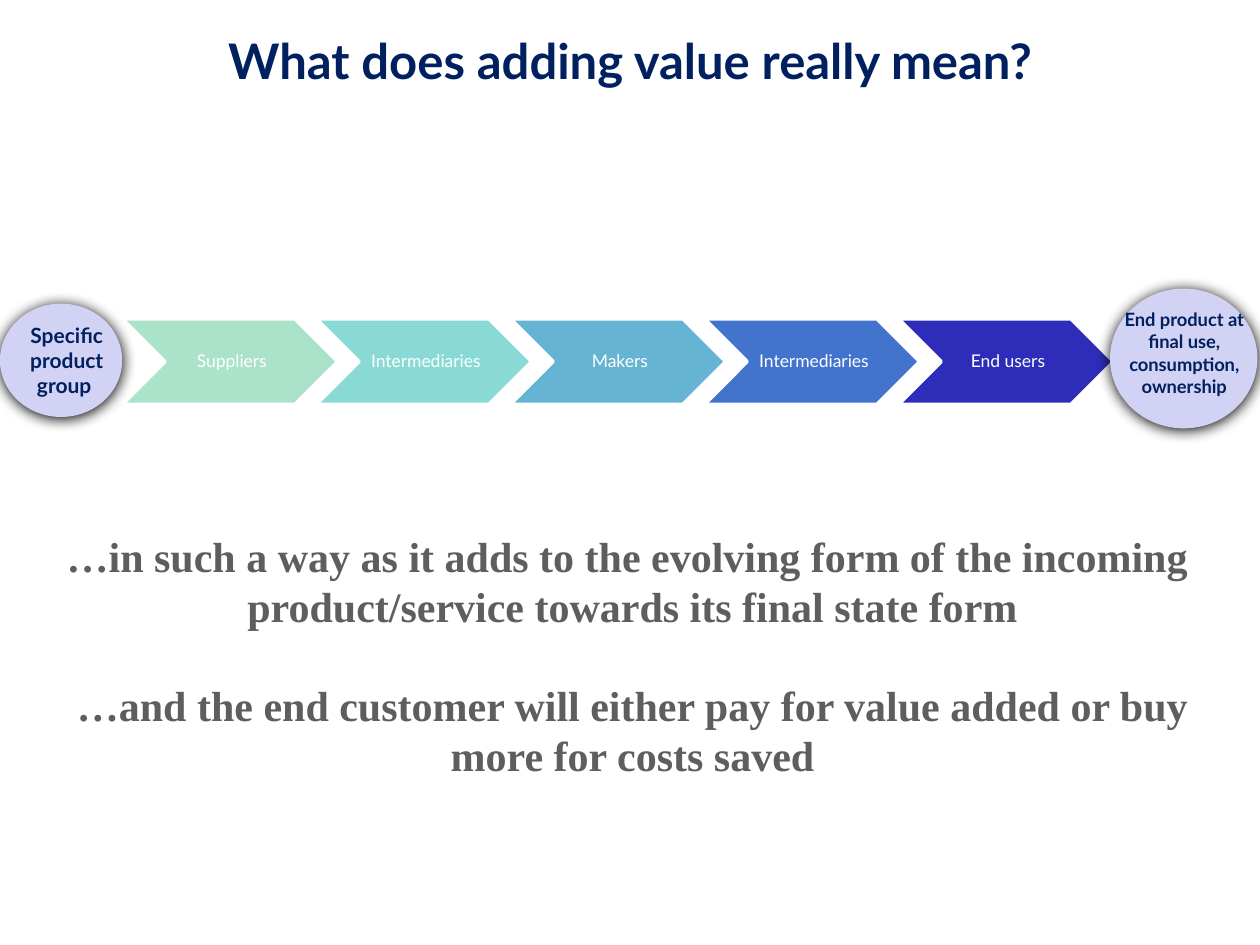
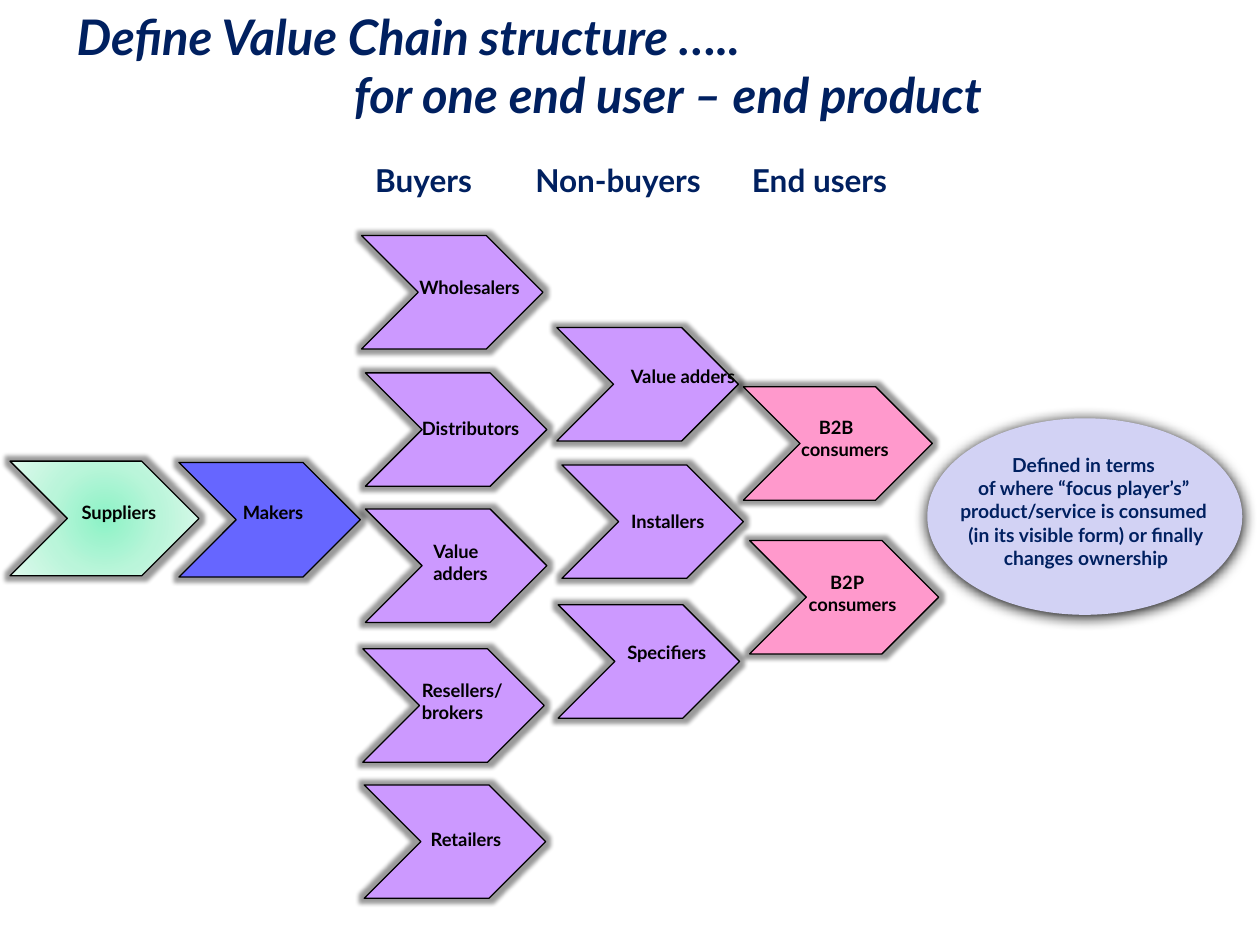
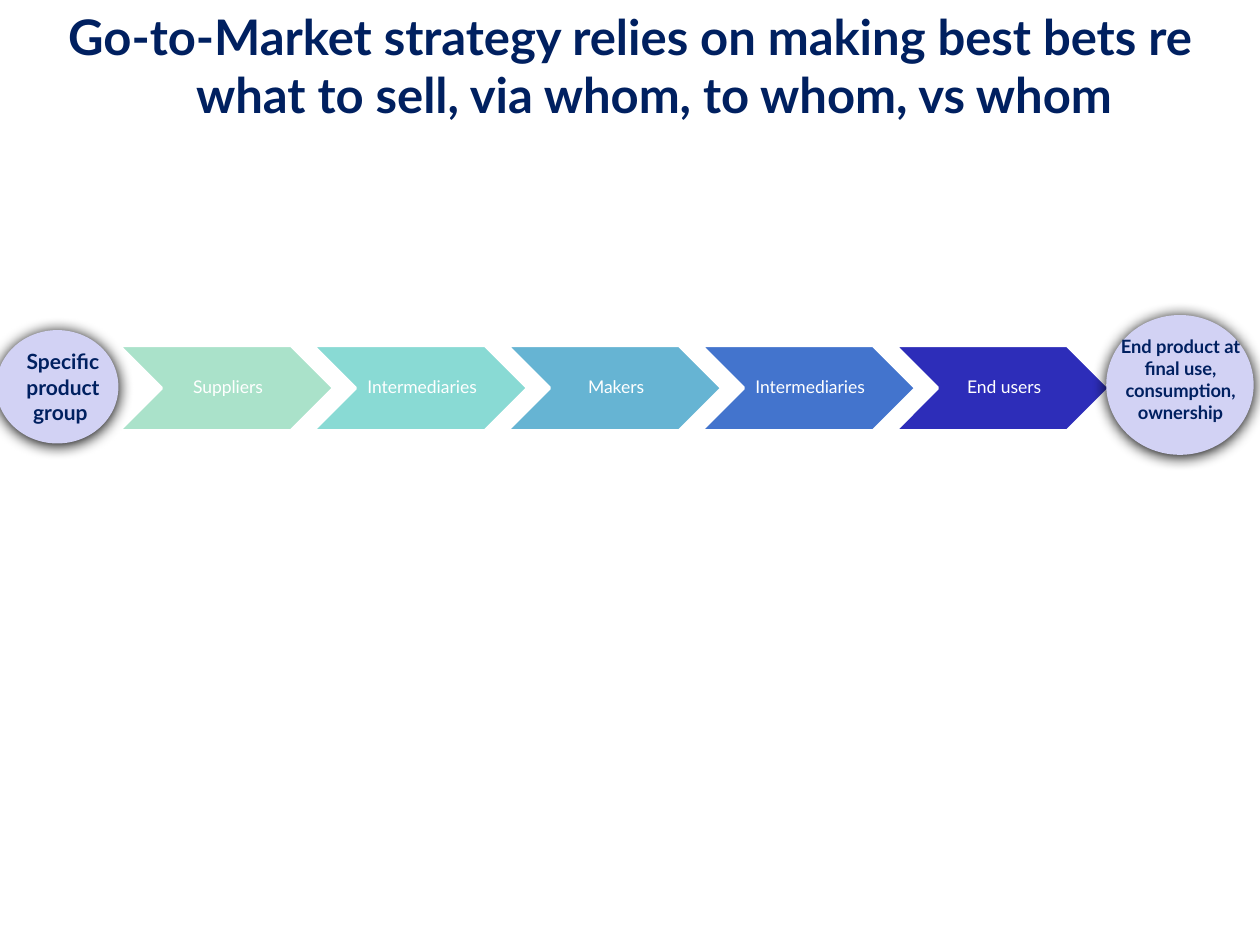
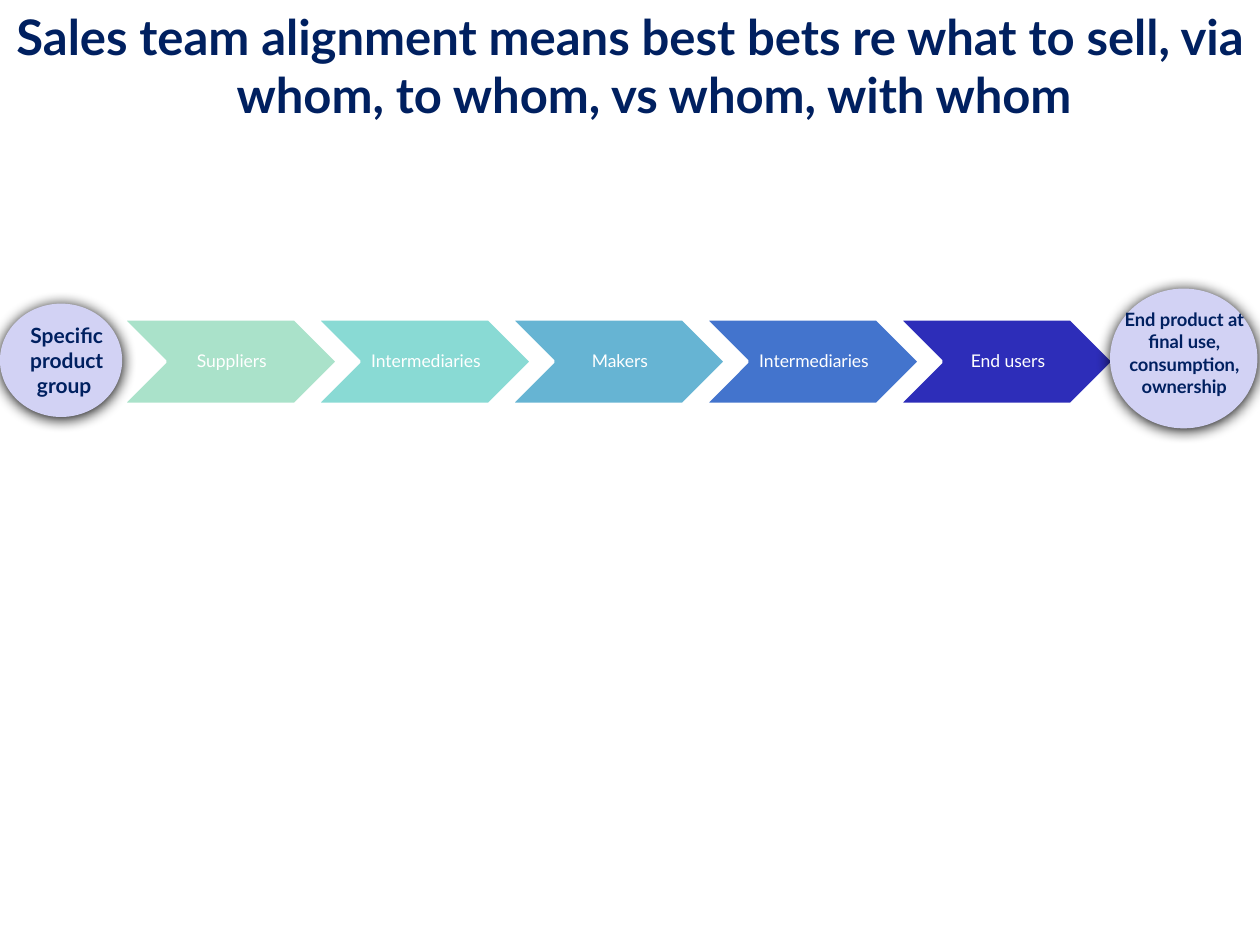
from lxml import etree
from pptx import Presentation
from pptx.dml.color import RGBColor
from pptx.enum.shapes import MSO_SHAPE as SHAPE
from pptx.enum.text import MSO_ANCHOR as ANCHOR, PP_ALIGN as ALIGN
from pptx.oxml import parse_xml
from pptx.oxml.ns import nsdecls, qn
from pptx.util import Emu, Inches, Pt

FONT = "Lato"
NAVY, BLACK, WHITE, GRAY = "002060", "000000", "FFFFFF", "5E5E5E"
LAVENDER, VIOLET, PINK, BLUE = "D2D2F4", "CC99FF", "FF99CC", "6666FF"
MINT_STOPS = [(0, "8CF2C6"), (50, "BAF5DA"), (100, "DEF9EC")]

CHAIN = [("Suppliers", "AAE2CA"), ("Intermediaries", "89DAD4"), ("Makers", "66B4D3"),
         ("Intermediaries", "4374CD"), ("End users", "2D2DB9")]
CHAIN_STEP = 1.54

STAGES = [
    ((1.42, 3.67, 1.44, 0.91), BLUE, ["Makers"], (1.83, 3.93, 0.75, 0.28), 0),
    ((0.08, 3.66, 1.5, 0.91), MINT_STOPS, ["Suppliers"], (0.55, 3.93, 0.94, 0.28), 0),
    ((2.87, 1.87, 1.44, 0.9), VIOLET, ["Wholesalers"], (3.23, 2.14, 1.13, 0.28), 0),
    ((2.9, 2.96, 1.44, 0.9), VIOLET, ["Distributors"], (3.25, 3.26, 1.11, 0.28), 0),
    ((2.9, 4.04, 1.44, 0.9), VIOLET, ["Value", "adders"], (3.34, 4.24, 0.72, 0.45), 0),
    ((2.88, 5.15, 1.44, 0.9), VIOLET, ["Resellers/ brokers"], (3.25, 5.34, 0.97, 0.45), 0),
    ((5.9, 3.07, 1.5, 0.9), PINK, ["B2B", "consumers"], (6.26, 3.25, 1.02, 0.45), 0.14),
    ((5.95, 4.29, 1.5, 0.9), PINK, ["B2P", "consumers"], (6.32, 4.48, 1.02, 0.45), 0.17),
    ((4.43, 4.8, 1.44, 0.9), VIOLET, ["Specifiers"], (4.88, 5.04, 0.92, 0.28), 0),
    ((4.46, 3.69, 1.44, 0.9), VIOLET, ["Installers"], (4.91, 4, 0.95, 0.28), 0),
    ((4.42, 2.6, 1.44, 0.9), VIOLET, ["Value adders"], (4.91, 2.85, 1.14, 0.45), 0),
    ((2.89, 6.23, 1.44, 0.9), VIOLET, ["Retailers"], (3.32, 6.52, 0.9, 0.28), 0),
]

HEADERS = [("Buyers", 2.88, 1.33), ("Non-buyers", 4.15, 2.16), ("End users", 5.87, 2.16)]


def rgb(color):
    return RGBColor.from_string(color)


def inches(box):
    return [Inches(v) for v in box]


def write(tf, lines, size=10.5, color=NAVY, font=FONT, bold=True, italic=False,
          align=ALIGN.CENTER, anchor=ANCHOR.TOP, gap=0, indents=(), hanging=0, spacing=None):
    tf.word_wrap = True
    tf.vertical_anchor = anchor
    for i, line in enumerate(lines):
        p = tf.paragraphs[0] if i == 0 else tf.add_paragraph()
        indent = indents[i] if i < len(indents) else 0
        if indent or hanging:
            pPr = p._p.get_or_add_pPr()
            pPr.set("marL", str(Inches(indent + hanging)))
            pPr.set("indent", str(Inches(-hanging)))
        p.alignment = align
        if spacing:
            p.line_spacing = spacing
        if gap and i == len(lines) - 1:
            p.space_before = Pt(gap)
        r = p.add_run()
        r.text = line
        f = r.font
        f.name, f.size, f.bold, f.italic = font, Pt(size), bold, italic
        f.color.rgb = rgb(color)


def add_text(shapes, box, lines, **fmt):
    tb = shapes.add_textbox(*inches(box))
    write(tb.text_frame, lines, **fmt)


def add_title(slide, text, top=0):
    add_text(slide.shapes, (0, top, 10, 1.07), [text], size=28, hanging=0.38)


def add_effect(sp, tag, alpha, **attrs):
    effects = sp._element.spPr.find(qn("a:effectLst"))
    effect = etree.SubElement(effects, qn(tag), {k: str(v) for k, v in attrs.items()})
    clr = etree.SubElement(effect, qn("a:srgbClr"), val=BLACK)
    etree.SubElement(clr, qn("a:alpha"), val=str(alpha * 1000))


def fill_radial(sp, stops):
    gs = "".join(f'<a:gs pos="{pos * 1000}"><a:srgbClr val="{color}"/></a:gs>'
                 for pos, color in stops)
    grad = parse_xml(f'<a:gradFill {nsdecls("a")}><a:gsLst>{gs}</a:gsLst><a:path path="circle">'
                     '<a:fillToRect l="50000" t="50000" r="50000" b="50000"/></a:path></a:gradFill>')
    sp.fill.background()
    spPr = sp._element.spPr
    spPr.replace(spPr.find(qn("a:noFill")), grad)


def add_shape(shapes, kind, box, fill, line=None, width=0.75):
    sp = shapes.add_shape(kind, *inches(box))
    sp.shadow.inherit = False
    if isinstance(fill, str):
        sp.fill.solid()
        sp.fill.fore_color.rgb = rgb(fill)
    else:
        fill_radial(sp, fill)
    if line:
        sp.line.color.rgb = rgb(line)
        sp.line.width = Pt(width)
    else:
        sp.line.fill.background()
    return sp


def add_bubble(shapes, box, text_box, lines, size):
    sp = add_shape(shapes, SHAPE.OVAL, box, LAVENDER)
    add_effect(sp, "a:outerShdw", 100, blurRad=Pt(8.5), dist=Pt(1), dir=5400000,
               algn="ctr", rotWithShape=0)
    add_text(shapes, text_box, lines, size=size)


def add_chain(slide, left=0, top=2.29):
    shapes = slide.shapes.add_group_shape().shapes
    for i, (name, color) in enumerate(CHAIN):
        box = (left + 0.97 + i * CHAIN_STEP, top + 0.24, 1.71, 0.68)
        sp = add_shape(shapes, SHAPE.CHEVRON, box, color, WHITE, 2)
        tf = sp.text_frame
        tf.margin_left = Inches(0.04)
        tf.margin_right = tf.margin_top = tf.margin_bottom = Inches(0.01)
        write(tf, [name], size=10, color=WHITE, bold=False, anchor=ANCHOR.MIDDLE, spacing=0.9)
    add_bubble(shapes, (left + 8.81, top, 1.17, 1.11), (left + 8.77, top + 0.11, 1.26, 0.98),
               ["End product at final use, consumption, ownership"], 10.5)
    add_bubble(shapes, (left, top + 0.12, 0.97, 0.9), (left, top + 0.22, 1.06, 0.91),
               ["Specific product group "], 12)


def add_stage(slide, box, fill, lines, label_box, indent):
    shapes = slide.shapes.add_group_shape().shapes
    sp = add_shape(shapes, SHAPE.CHEVRON, box, fill, BLACK)
    add_effect(sp, "a:glow", 40, rad=Pt(5))
    add_text(shapes, label_box, lines, color=BLACK, align=ALIGN.LEFT, indents=(indent,))


def adding_value(slide):
    add_title(slide, "What does adding value really mean?", 0.19)
    add_chain(slide)
    add_text(slide.shapes, (0.33, 4.16, 9.38, 2.12),
             ["…in such a way as it adds to the evolving form of the incoming ",
              "product/service towards its final state form",
              "…and the end customer will either pay for value added or buy more for costs saved"],
             size=24, font="Times New Roman", color=GRAY, gap=27.6)


def chain_structure(slide):
    add_text(slide.shapes, (0.51, 0, 8.93, 1.07),
             ["Define Value Chain structure …..", "for one end user – end product"],
             size=28, italic=True, align=ALIGN.LEFT, indents=(0, 2.2))
    add_bubble(slide.shapes, (7.36, 3.32, 2.5, 1.56), (7.24, 3.55, 2.76, 1.21),
               ["Defined in terms ", "of where “focus player’s” ", "product/service is consumed ",
                "(in its visible form) or finally", "changes ownership"], 11)
    for stage in STAGES:
        add_stage(slide, *stage)
    for name, left, width in HEADERS:
        add_text(slide.shapes, (left, 1.23, width, 0.4), [name], size=18, align=ALIGN.LEFT)


def go_to_market(slide):
    add_title(slide, "Go-to-Market strategy relies on making best bets re what to sell, "
                     "via whom, to whom, vs whom")
    add_chain(slide, -0.03, 2.5)


def sales_alignment(slide):
    add_title(slide, "Sales team alignment means best bets re what to sell, via whom, "
                     "to whom, vs whom, with whom")
    add_chain(slide)


def main():
    prs = Presentation()
    prs.slide_width, prs.slide_height = Inches(10), Inches(7.5)
    for build in (adding_value, chain_structure, go_to_market, sales_alignment):
        build(prs.slides.add_slide(prs.slide_layouts[6]))
    prs.save("out.pptx")


if __name__ == "__main__":
    main()
